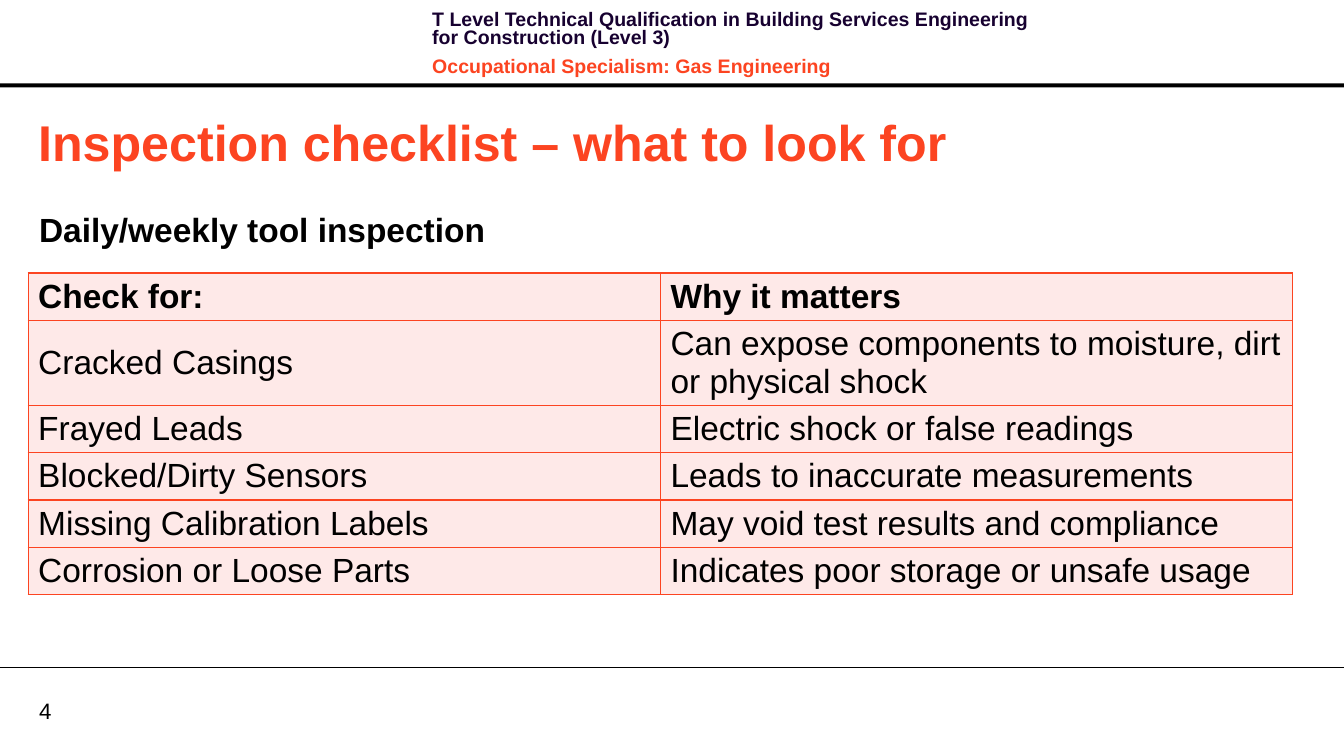
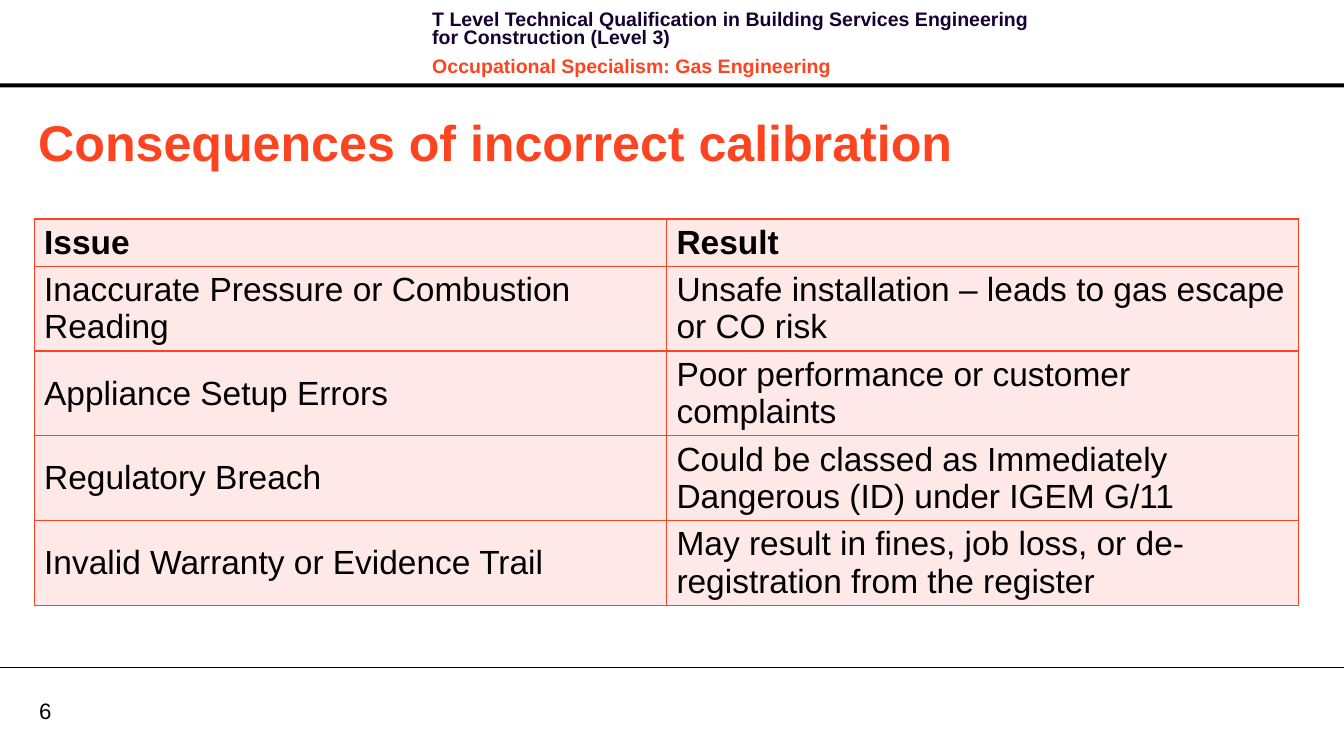
from lxml.etree import SubElement
from pptx import Presentation
from pptx.dml.color import RGBColor
from pptx.enum.shapes import MSO_CONNECTOR, MSO_SHAPE
from pptx.enum.text import MSO_ANCHOR, MSO_AUTO_SIZE, PP_ALIGN
from pptx.oxml.ns import qn
from pptx.util import Pt

BLACK = RGBColor(0x00, 0x00, 0x00)
WHITE = RGBColor(0xFF, 0xFF, 0xFF)
ORANGE = RGBColor(0xFC, 0x44, 0x21)
NAVY = RGBColor(0x17, 0x01, 0x30)
PINK = RGBColor(0xFE, 0xE9, 0xE8)

WIDTH, HEIGHT = 964.08, 538.56
TABLE_WIDTH = 907.2
ROW_HEIGHT, EXTRA_LINE = 34, 26.8
TITLE_AND_CONTENT, TITLE_ONLY = 1, 5

TITLE_STYLE = {"size": Pt(36), "bold": True}
HEADING_STYLE = {"size": Pt(24), "bold": True}
CELL_STYLE = {"size": Pt(24), "bold": False}
HEADER_STYLE = {"size": Pt(14), "bold": True}
NUMBER_STYLE = {"size": Pt(16), "bold": False}

HEADER_LINES = [
    ("T Level Technical Qualification in Building Services Engineering "
     "for Construction (Level 3)", NAVY),
    ("Occupational Specialism: Gas Engineering", ORANGE),
]

SLIDES = [
    {
        "number": "4",
        "title": "Inspection checklist – what to look for",
        "heading": "Daily/weekly tool inspection",
        "table_at": (20.2, 195.8),
        "rows": [
            ("Check for:", "Why it matters", 1),
            ("Cracked Casings",
             "Can expose components to moisture, dirt or physical shock", 2),
            ("Frayed Leads", "Electric shock or false readings", 1),
            ("Blocked/Dirty Sensors", "Leads to inaccurate measurements", 1),
            ("Missing Calibration Labels",
             "May void test results and compliance", 1),
            ("Corrosion or Loose Parts",
             "Indicates poor storage or unsafe usage", 1),
        ],
    },
    {
        "number": "6",
        "title": "Consequences of incorrect calibration",
        "heading": None,
        "table_at": (24.5, 157),
        "rows": [
            ("Issue", "Result", 1),
            ("Inaccurate Pressure or Combustion Reading",
             "Unsafe installation – leads to gas escape or CO risk", 2),
            ("Appliance Setup Errors",
             "Poor performance or customer complaints", 2),
            ("Regulatory Breach",
             "Could be classed as Immediately Dangerous (ID) under IGEM G/11", 2),
            ("Invalid Warranty or Evidence Trail",
             "May result in fines, job loss, or de-registration from the register", 2),
        ],
    },
]


def write(paragraph, text, style, color=BLACK):
    paragraph.text = text
    paragraph.alignment = PP_ALIGN.LEFT
    paragraph.font.name = "Arial"
    paragraph.font.color.rgb = color
    for name, value in style.items():
        setattr(paragraph.font, name, value)


def place(shape, left, top, width, height):
    shape.left, shape.top = Pt(left), Pt(top)
    shape.width, shape.height = Pt(width), Pt(height)


def set_frame(frame, anchor, margin=None):
    frame.word_wrap = True
    frame.auto_size = MSO_AUTO_SIZE.NONE
    frame.vertical_anchor = anchor
    if margin is not None:
        for side in ("left", "top", "right", "bottom"):
            setattr(frame, f"margin_{side}", Pt(margin))


def add_text_box(slide, *box):
    return slide.shapes.add_textbox(*map(Pt, box)).text_frame


def add_furniture(slide, number):
    band = slide.shapes.add_shape(
        MSO_SHAPE.RECTANGLE, 0, Pt(59.8), Pt(WIDTH), Pt(2.9))
    band.shadow.inherit = False
    band.fill.solid()
    band.fill.fore_color.rgb = BLACK
    band.line.fill.background()

    rule = slide.shapes.add_connector(
        MSO_CONNECTOR.STRAIGHT, 0, Pt(478.8), Pt(WIDTH), Pt(478.8))
    rule.line.color.rgb = BLACK
    rule.line.width = Pt(0.75)
    SubElement(rule._element.spPr, qn("a:effectLst"))

    header = add_text_box(slide, 303, 5, 458.6, 46)
    set_frame(header, MSO_ANCHOR.TOP)
    for index, (text, color) in enumerate(HEADER_LINES):
        paragraph = header.add_paragraph() if index else header.paragraphs[0]
        write(paragraph, text, HEADER_STYLE, color)
        paragraph.line_spacing = Pt(13.1)
        paragraph.space_before = Pt(4 if index else 0)
        paragraph.space_after = Pt(4)

    page_number = add_text_box(slide, 28, 499.7, 46, 19.4)
    set_frame(page_number, MSO_ANCHOR.MIDDLE, 0)
    write(page_number.paragraphs[0], number, NUMBER_STYLE)


def add_title(slide, text):
    title = slide.shapes.title
    place(title, 20.2, 75.6, 915.8, 51.1)
    set_frame(title.text_frame, MSO_ANCHOR.MIDDLE)
    write(title.text_frame.paragraphs[0], text, TITLE_STYLE, ORANGE)


def add_heading(slide, text):
    body = slide.placeholders[1]
    place(body, 28, 150, 737.3, 32)
    set_frame(body.text_frame, MSO_ANCHOR.TOP, 0)
    paragraph = body.text_frame.paragraphs[0]
    properties = paragraph._p.get_or_add_pPr()
    properties.set("marL", "0")
    properties.set("indent", "0")
    SubElement(properties, qn("a:buNone"))
    write(paragraph, text, HEADING_STYLE)
    paragraph.space_before = Pt(0)


def add_borders(cell):
    properties = cell._tc.get_or_add_tcPr()
    for side in ("lnL", "lnR", "lnT", "lnB"):
        line = SubElement(properties, qn(f"a:{side}"), w=str(Pt(1)))
        fill = SubElement(line, qn("a:solidFill"))
        SubElement(fill, qn("a:srgbClr"), val=str(ORANGE))


def add_grid(slide, position, rows):
    heights = [ROW_HEIGHT + EXTRA_LINE * (lines - 1) for *_, lines in rows]
    left, top = position
    table = slide.shapes.add_table(
        len(rows), 2, Pt(left), Pt(top), Pt(TABLE_WIDTH), Pt(sum(heights))).table
    table.first_row = table.horz_banding = False
    for row_index, (*texts, _) in enumerate(rows):
        table.rows[row_index].height = Pt(heights[row_index])
        style = CELL_STYLE if row_index else HEADING_STYLE
        for column_index, text in enumerate(texts):
            cell = table.cell(row_index, column_index)
            add_borders(cell)
            cell.fill.solid()
            cell.fill.fore_color.rgb = PINK
            cell.vertical_anchor = MSO_ANCHOR.MIDDLE
            write(cell.text_frame.paragraphs[0], text, style)


def main():
    presentation = Presentation()
    presentation.slide_width, presentation.slide_height = Pt(WIDTH), Pt(HEIGHT)
    background = presentation.slide_master.background.fill
    background.solid()
    background.fore_color.rgb = WHITE
    for content in SLIDES:
        layout = TITLE_AND_CONTENT if content["heading"] else TITLE_ONLY
        slide = presentation.slides.add_slide(presentation.slide_layouts[layout])
        add_furniture(slide, content["number"])
        add_title(slide, content["title"])
        if content["heading"]:
            add_heading(slide, content["heading"])
        add_grid(slide, content["table_at"], content["rows"])
    presentation.save("out.pptx")


if __name__ == "__main__":
    main()
